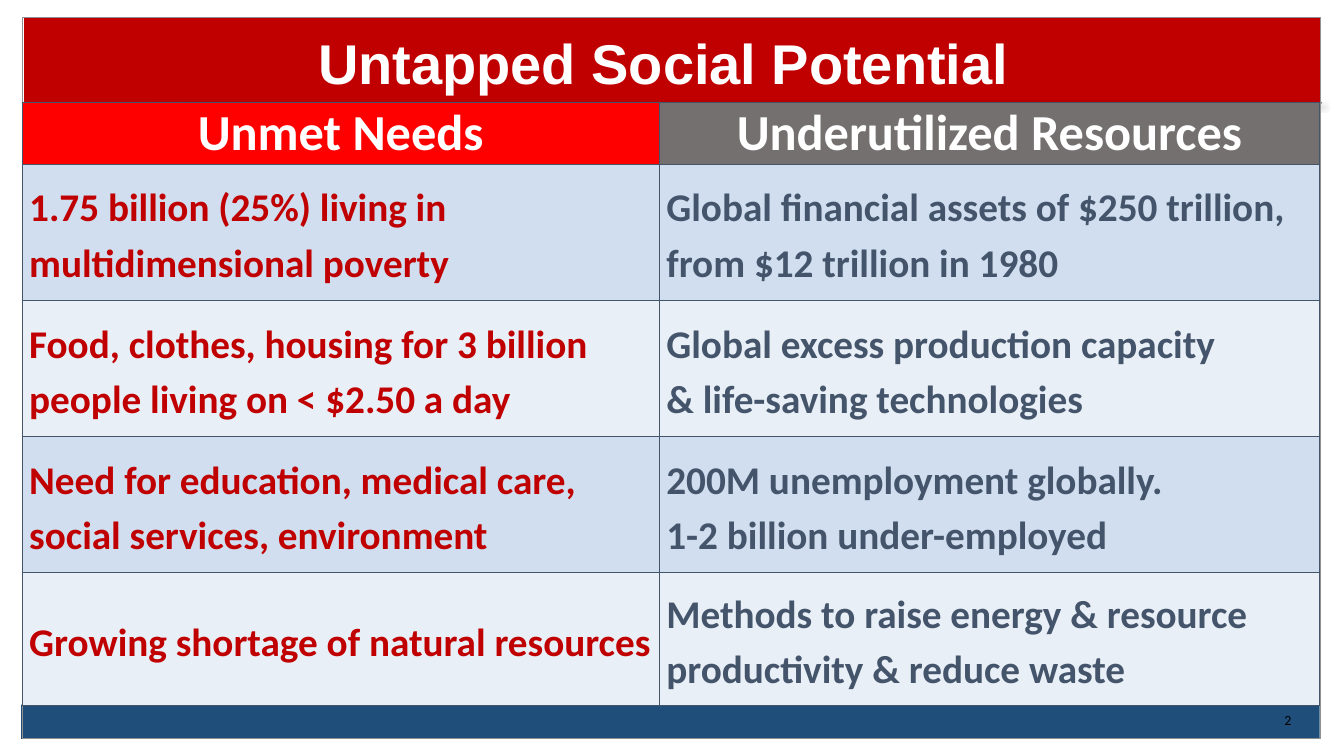
from dataclasses import dataclass

from lxml.etree import SubElement
from pptx import Presentation
from pptx.dml.color import RGBColor
from pptx.enum.shapes import MSO_CONNECTOR, MSO_SHAPE
from pptx.enum.text import MSO_ANCHOR, PP_ALIGN
from pptx.oxml.ns import qn
from pptx.util import Inches, Pt

COLOURS = {
    "white": "FFFFFF", "black": "000000", "dark_red": "C00000", "red": "FF0000",
    "grey": "757070", "slate": "44546A", "navy": "1E4E79", "frame": "909090",
    "rule": "3A3838", "band_dark": "D0DEEF", "band_light": "E9EFF7",
}


@dataclass(frozen=True)
class Panel:
    left: float
    top: float
    width: float
    height: float
    fill: str | None = None
    line: str | None = None


@dataclass(frozen=True)
class TextStyle:
    size: float
    colour: str
    font: str = "Calibri"
    bold: bool = True
    align: PP_ALIGN = PP_ALIGN.LEFT
    spacing: float = 1.0


@dataclass(frozen=True)
class Column:
    width: float
    heading: str
    heading_fill: str
    text_colour: str
    entries: tuple[str, ...]


PANELS = (
    Panel(0.24, 0.18, 12.86, 0.84, fill="dark_red"),
    Panel(0.21, 6.99, 12.88, 0.34, fill="navy"),
    Panel(0.22, 0.17, 12.88, 7.16, line="frame"),
)
COLUMNS = (
    Column(6.32, "Unmet Needs", "red", "dark_red", (
        "1.75 billion (25%) living in multidimensional poverty",
        "Food, clothes, housing for 3 billion people living on < $2.50 a day",
        "Need for education, medical care, social services, environment",
        "Growing shortage of natural resources",
    )),
    Column(6.55, "Underutilized Resources", "grey", "slate", (
        "Global financial assets of $250 trillion, from $12 trillion in 1980",
        "Global excess production capacity\n& life-saving technologies",
        "200M unemployment globally.\n1-2 billion under-employed",
        "Methods to raise energy & resource productivity & reduce waste",
    )),
)
ROW_HEIGHTS = (0.61, 1.35, 1.35, 1.35, 1.32)


def rgb(name: str) -> RGBColor:
    return RGBColor.from_string(COLOURS[name])


def write(frame, text: str, style: TextStyle) -> None:
    para = frame.paragraphs[0]
    para.text = text
    para.alignment = style.align
    para.line_spacing = style.spacing
    for span in para.runs:
        values = {"size": Pt(style.size), "name": style.font, "bold": style.bold}
        for name, value in values.items():
            setattr(span.font, name, value)
        span.font.color.rgb = rgb(style.colour)


def add_panel(page, panel: Panel) -> None:
    box = page.shapes.add_shape(
        MSO_SHAPE.RECTANGLE, Inches(panel.left), Inches(panel.top),
        Inches(panel.width), Inches(panel.height))
    box.shadow.inherit = False
    if panel.fill:
        box.fill.solid()
        box.fill.fore_color.rgb = rgb(panel.fill)
    else:
        box.fill.background()
    if panel.line:
        box.line.color.rgb = rgb(panel.line)
        box.line.width = Pt(0.75)
    else:
        box.line.fill.background()


def add_title_rule(page) -> None:
    """Draw the thin line under the title bar with its soft shadow."""
    rule = page.shapes.add_connector(
        MSO_CONNECTOR.STRAIGHT, Inches(0.23), Inches(1.03), Inches(13.11), Inches(1.02))
    rule.line.color.rgb = rgb("rule")
    rule.line.width = Pt(0.75)
    effects = SubElement(rule.element.spPr, qn("a:effectLst"))
    shadow = SubElement(effects, qn("a:outerShdw"), blurRad=str(Pt(4)),
                        dist=str(Pt(3)), dir=str(45 * 60000))
    colour = SubElement(shadow, qn("a:srgbClr"), val=COLOURS["black"])
    SubElement(colour, qn("a:alpha"), val="40000")


def add_page_number(page) -> None:
    box = page.shapes.add_textbox(Inches(12.64), Inches(7.01), Inches(0.37), Inches(0.27))
    box.text_frame.word_wrap = True
    write(box.text_frame, "2", TextStyle(10, "black", bold=False))


def place_title(page) -> None:
    """Fill the title placeholder and bring it in front of the panels."""
    title = page.shapes.title
    bounds = {"left": 0.22, "top": 0.22, "width": 12.87, "height": 0.8}
    for name, value in bounds.items():
        setattr(title, name, Inches(value))
    title.text_frame.vertical_anchor = MSO_ANCHOR.MIDDLE
    write(title.text_frame, "Untapped Social Potential ",
          TextStyle(40, "white", font="Arial", align=PP_ALIGN.CENTER))
    page.shapes[-1].element.addnext(title.element)


def format_cell(cell, text: str, fill: str, style: TextStyle) -> None:
    values = {
        "margin_left": Inches(0.07), "margin_right": Inches(0.07),
        "margin_top": 0, "margin_bottom": 0, "vertical_anchor": MSO_ANCHOR.MIDDLE,
    }
    for name, value in values.items():
        setattr(cell, name, value)
    write(cell.text_frame, text, style)
    properties = cell._tc.get_or_add_tcPr()
    for side in ("a:lnL", "a:lnR", "a:lnT", "a:lnB"):
        border = SubElement(properties, qn(side), w=str(Pt(1)))
        solid = SubElement(border, qn("a:solidFill"))
        SubElement(solid, qn("a:srgbClr"), val=COLOURS["slate"])
    cell.fill.solid()
    cell.fill.fore_color.rgb = rgb(fill)


def add_comparison(page) -> None:
    width = sum(column.width for column in COLUMNS)
    table = page.shapes.add_table(
        len(ROW_HEIGHTS), len(COLUMNS), Inches(0.22), Inches(1.02),
        Inches(width), Inches(sum(ROW_HEIGHTS))).table
    for row, height in zip(table.rows, ROW_HEIGHTS):
        row.height = Inches(height)
    heading_style = TextStyle(36, "white", align=PP_ALIGN.CENTER)
    for index, column in enumerate(COLUMNS):
        table.columns[index].width = Inches(column.width)
        format_cell(table.cell(0, index), column.heading, column.heading_fill, heading_style)
        entry_style = TextStyle(28, column.text_colour, spacing=1.15)
        for number, entry in enumerate(column.entries, start=1):
            band = "band_dark" if number % 2 else "band_light"
            format_cell(table.cell(number, index), entry, band, entry_style)


def main() -> None:
    deck = Presentation()
    deck.slide_width, deck.slide_height = Inches(13.33), Inches(7.5)
    page = deck.slides.add_slide(deck.slide_layouts.get_by_name("Title Only"))
    add_panel(page, PANELS[0])
    add_title_rule(page)
    for panel in PANELS[1:]:
        add_panel(page, panel)
    add_page_number(page)
    place_title(page)
    add_comparison(page)
    deck.save("out.pptx")


if __name__ == "__main__":
    main()
